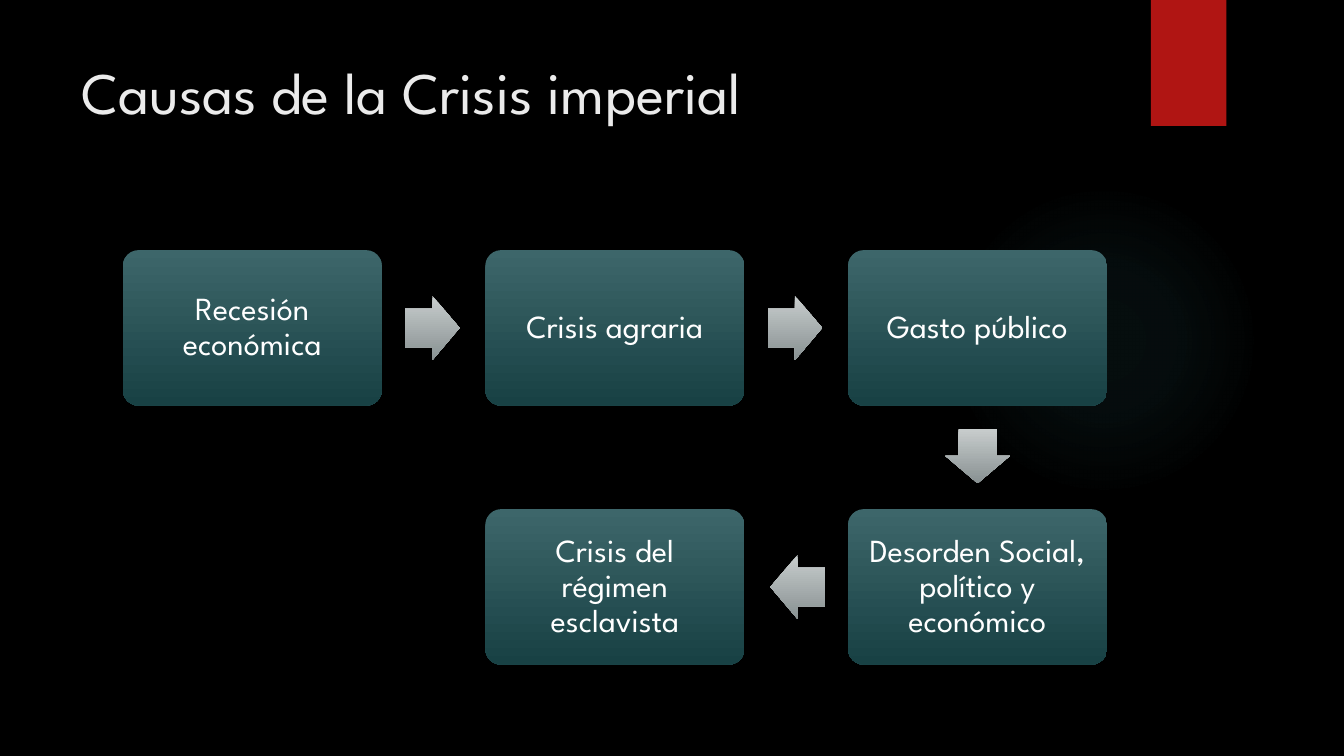
from itertools import pairwise
from pptx import Presentation
from pptx.dml.color import RGBColor
from pptx.enum.shapes import MSO_SHAPE as Shape
from pptx.enum.text import MSO_ANCHOR as Anchor, PP_ALIGN as Align
from pptx.oxml import parse_xml
from pptx.oxml.ns import nsdecls
from pptx.util import Pt

FONT = "League Spartan"
BLACK = RGBColor(0x00, 0x00, 0x00)
WHITE = RGBColor(0xFF, 0xFF, 0xFF)
PALE = RGBColor(0xEB, 0xEB, 0xEB)
RED = RGBColor(0xB0, 0x15, 0x13)
AQUA = RGBColor(0x50, 0xB9, 0xC1)
TEAL = RGBColor(0x3D, 0x66, 0x6A)
DEEP = RGBColor(0x18, 0x41, 0x44)
SILVER = RGBColor(0xC8, 0xCD, 0xCD)
GREY = RGBColor(0x88, 0x91, 0x92)

DOWN = '<a:lin ang="5400000" scaled="0"/>'
ROUND = ('<a:path path="circle"><a:fillToRect l="50000" t="50000" '
         'r="50000" b="50000"/></a:path>')

LEFT, TOP = 87.8, 178.7
STEP_X, STEP_Y = 259, 185
BOX_W, BOX_H = 185, 111
ARROW_W, ARROW_H = 39, 46

# Text, column and row of each cause, in reading order of the flow
CAUSES = [
    ("Recesión económica", 0, 0),
    ("Crisis agraria", 1, 0),
    ("Gasto público", 2, 0),
    ("Desorden Social, político y económico", 2, 1),
    ("Crisis del régimen esclavista", 1, 1),
]


def add_shape(slide, kind, x, y, w, h):
    shape = slide.shapes.add_shape(kind, Pt(x), Pt(y), Pt(w), Pt(h))
    shape.shadow.inherit = False
    shape.line.fill.background()
    return shape


def shade(shape, stops, course):
    """Fill with (position, colour, opacity) stops, all in percent."""
    marks = "".join(
        f'<a:gs pos="{pos * 1000}"><a:srgbClr val="{color}">'
        f'<a:alpha val="{alpha * 1000}"/></a:srgbClr></a:gs>'
        for pos, color, alpha in stops)
    fill = parse_xml(f'<a:gradFill {nsdecls("a")} rotWithShape="0">'
                     f'<a:gsLst>{marks}</a:gsLst>{course}</a:gradFill>')
    shape.line._get_or_add_ln().addprevious(fill)


def add_run(par, text, size, color):
    run = par.add_run()
    run.text = text
    run.font.name = FONT
    run.font.size = Pt(size)
    run.font.color.rgb = color


def add_title(slide, text):
    box = slide.shapes.add_textbox(Pt(51), Pt(36), Pt(741), Pt(110))
    box.text_frame.word_wrap = True
    add_run(box.text_frame.paragraphs[0], text, 42, PALE)


def add_glow(slide):
    glow = add_shape(slide, Shape.OVAL, 677.5, 131.8, 221.8, 221.8)
    shade(glow, [(0, AQUA, 7), (36, AQUA, 6), (69, AQUA, 0)], ROUND)


def add_tab(slide):
    tab = add_shape(slide, Shape.RECTANGLE, 822, 0, 54, 90)
    tab.fill.solid()
    tab.fill.fore_color.rgb = RED


def add_box(slide, text, col, row):
    box = add_shape(slide, Shape.ROUNDED_RECTANGLE, LEFT + col * STEP_X,
                    TOP + row * STEP_Y, BOX_W, BOX_H)
    box.adjustments[0] = 0.1
    shade(box, [(0, TEAL, 100), (100, DEEP, 100)], DOWN)
    frame = box.text_frame
    frame.word_wrap = True
    frame.vertical_anchor = Anchor.MIDDLE
    frame.margin_left = frame.margin_right = Pt(7.2)
    frame.margin_top = frame.margin_bottom = Pt(7.2)
    par = frame.paragraphs[0]
    par.alignment = Align.CENTER
    par.line_spacing = 0.9
    add_run(par, text, 23, WHITE)


def add_arrow(slide, start, end):
    """Point from one (column, row) cell to the next, midway in the gap."""
    (col, row), (col2, row2) = start, end
    dx, dy = col2 - col, row2 - row
    x = LEFT + (col + col2) / 2 * STEP_X + BOX_W / 2 - dx
    y = TOP + (row + row2) / 2 * STEP_Y + BOX_H / 2 - dy
    arrow = add_shape(slide, Shape.RIGHT_ARROW, x - ARROW_W / 2,
                      y - ARROW_H / 2, ARROW_W, ARROW_H)
    arrow.adjustments[0] = 0.6
    arrow.adjustments[1] = 0.5
    arrow.rotation = {(1, 0): 0, (0, 1): 90, (-1, 0): 180}[dx, dy]
    shade(arrow, [(0, SILVER, 100), (100, GREY, 100)], DOWN)


def main():
    deck = Presentation()
    deck.slide_width, deck.slide_height = Pt(960), Pt(540)
    slide = deck.slides.add_slide(deck.slide_layouts[6])
    slide.background.fill.solid()
    slide.background.fill.fore_color.rgb = BLACK
    add_glow(slide)
    add_title(slide, "Causas de la Crisis imperial")
    add_tab(slide)
    for text, col, row in CAUSES:
        add_box(slide, text, col, row)
    for start, end in pairwise(CAUSES):
        add_arrow(slide, start[1:], end[1:])
    deck.save("out.pptx")


if __name__ == "__main__":
    main()
